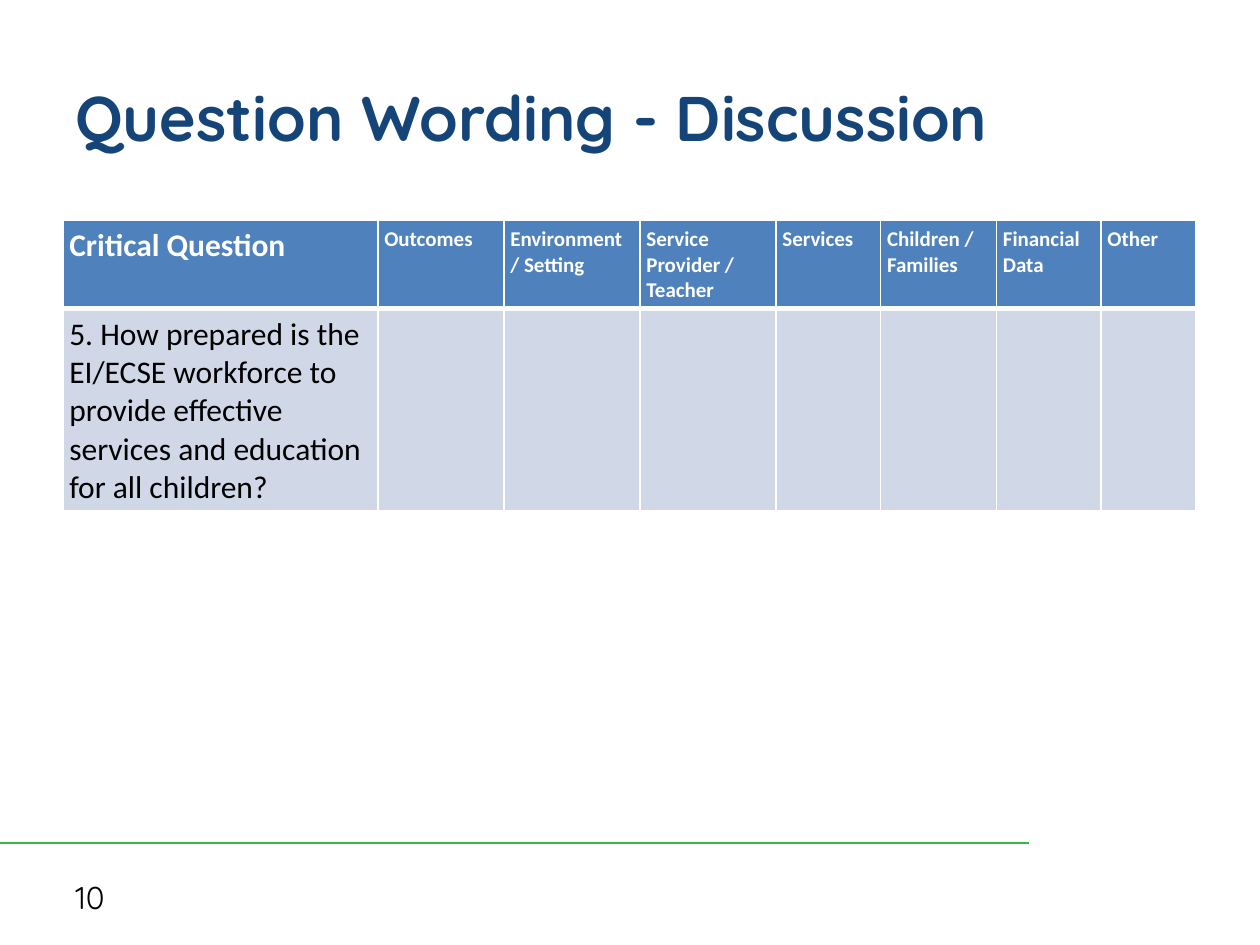
from pptx import Presentation
from pptx import util as u
from pptx.dml.color import RGBColor
from pptx.enum import shapes, text
from pptx.oxml.ns import qn
from lxml import etree

NAVY, GREEN, BLUE, PALE = "154578", "39B54A", "4F81BD", "D0D8E8"
WHITE, BLACK = "FFFFFF", "000000"

HEADINGS = ["Critical Question", "Outcomes", "Environment / Setting",
            "Service Provider / Teacher", "Services", "Children / Families",
            "Financial Data", "Other"]
QUESTION = ("5. How prepared is the EI/ECSE workforce to provide effective "
            "services and education for all children?")
COLUMN_WIDTHS = [2.5, 1, 1.08, 1.08, 0.83, 0.92, 0.83, 0.75]
ROW_HEIGHTS = [0.7, 1.6]


def color(value):
    return RGBColor.from_string(value)


def set_font(paragraph, name, size, value, bold=False):
    font = paragraph.font
    font.name, font.size, font.bold = name, u.Pt(size), bold
    font.color.rgb = color(value)


def add_label(slide, box, wording, size, value, bold=False):
    label = slide.shapes.add_textbox(*map(u.Inches, box))
    frame = label.text_frame
    frame.word_wrap = True
    frame.vertical_anchor = text.MSO_ANCHOR.MIDDLE
    frame.text = wording
    set_font(frame.paragraphs[0], "Quicksand", size, value, bold)


def set_borders(cell, **widths):
    properties = cell._tc.get_or_add_tcPr()
    # Borders come before the fill, in the order left, right, top, bottom
    for position, side in enumerate("LRTB"):
        border = etree.Element(qn(f"a:ln{side}"), w=str(u.Pt(widths.get(side, 1))))
        fill = etree.SubElement(border, qn("a:solidFill"))
        etree.SubElement(fill, qn("a:srgbClr"), val=WHITE)
        properties.insert(position, border)


def style_cell(cell, wording, size, fill, value, bold, **borders):
    cell.margin_left = cell.margin_right = u.Inches(0.05)
    cell.margin_top = cell.margin_bottom = u.Inches(0.05)
    cell.fill.solid()
    cell.fill.fore_color.rgb = color(fill)
    cell.text = wording
    set_font(cell.text_frame.paragraphs[0], "Calibri", size, value, bold)
    set_borders(cell, **borders)


def add_question_table(slide, box):
    table = slide.shapes.add_table(2, len(HEADINGS), *map(u.Inches, box)).table
    for row, height in zip(table.rows, ROW_HEIGHTS):
        row.height = u.Inches(height)
    for index, (heading, width) in enumerate(zip(HEADINGS, COLUMN_WIDTHS)):
        first = index == 0
        table.columns[index].width = u.Inches(width)
        style_cell(table.cell(0, index), heading, 18 if first else 12,
                   BLUE, WHITE, True, B=3)
        style_cell(table.cell(1, index), QUESTION if first else "", 18,
                   PALE, BLACK, False, T=3)


def add_footer(slide, box, number):
    left, top, width, height = box
    # Rule from the slide's left edge
    rule = slide.shapes.add_connector(
        shapes.MSO_CONNECTOR.STRAIGHT, u.Inches(left), u.Inches(top),
        u.Inches(left + width), u.Inches(top))
    rule.line.color.rgb = color(GREEN)
    rule.line.width = u.Pt(1.5)
    etree.SubElement(rule._element.spPr, qn("a:effectLst"))
    # Slide number
    add_label(slide, (left + 0.5, top + 0.23, 2.33, height - 0.23), number, 18, BLACK)


def main():
    deck = Presentation()
    deck.slide_width, deck.slide_height = u.Inches(10), u.Inches(7.5)
    slide = deck.slides.add_slide(deck.slide_layouts[6])
    add_footer(slide, (0, 6.69, 8.17, 0.63), "10")
    add_label(slide, (0.5, 0.3, 9, 1.25), "Question Wording - Discussion", 36, NAVY, True)
    add_question_table(slide, (0.5, 1.75, 9, sum(ROW_HEIGHTS)))
    deck.save("out.pptx")


if __name__ == "__main__":
    main()
